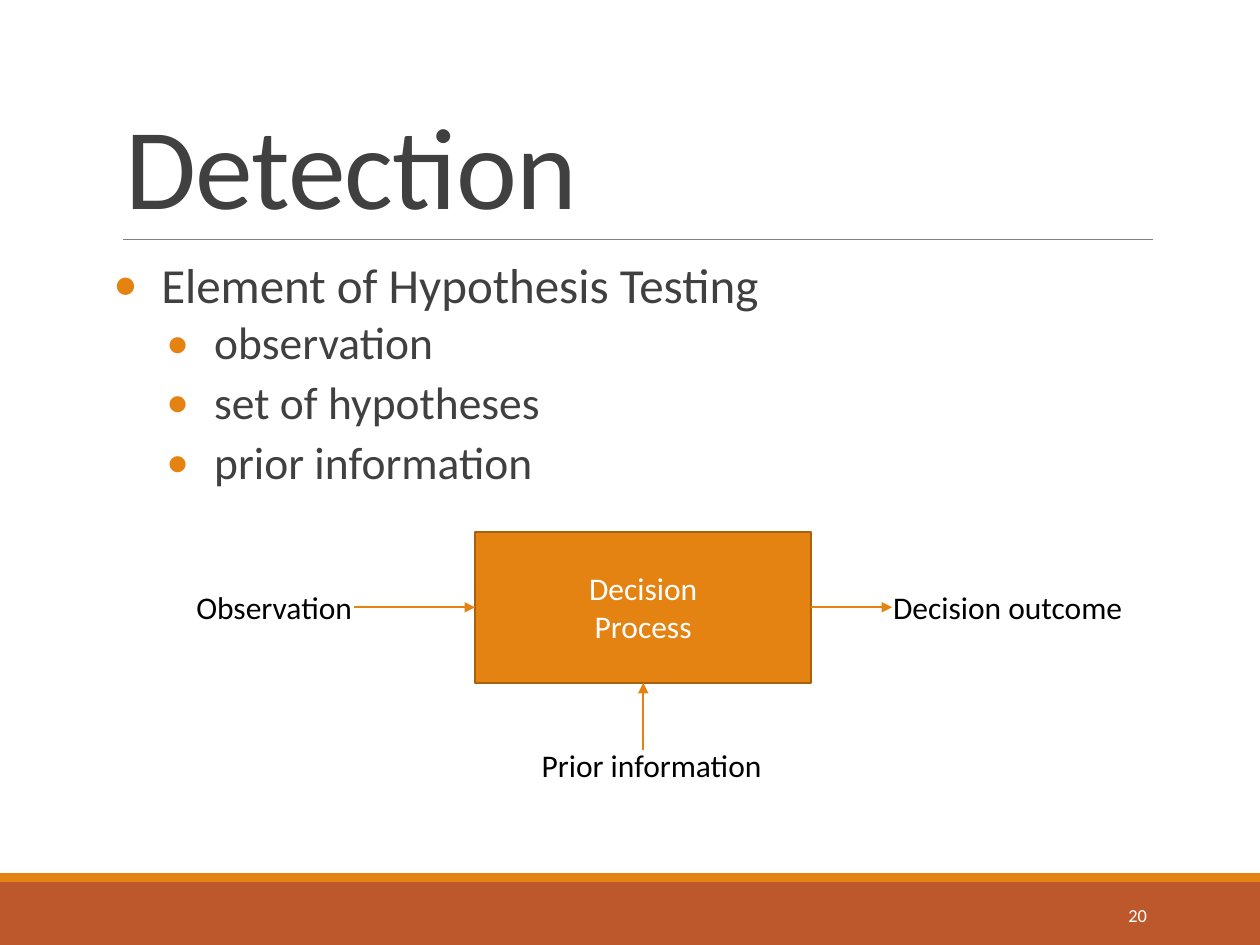
from typing import NamedTuple

from lxml.etree import SubElement
from pptx import Presentation
from pptx.dml.color import RGBColor
from pptx.enum.shapes import MSO_CONNECTOR as Connector, MSO_SHAPE as Shape
from pptx.enum.text import MSO_ANCHOR as Anchor, PP_ALIGN as Align
from pptx.oxml.ns import qn
from pptx.util import Inches, Pt

COLUMNS, ROWS = 100, 75
CELL = Inches(10) / COLUMNS
ORANGE, RUST, BROWN = "E48312", "BD582C", "A9610D"
DARK, GREY, BLACK, WHITE = "404040", "808080", "000000", "FFFFFF"
PADDING = (1, 0.5, 1, 0.5)


class Box(NamedTuple):
    left: float
    top: float
    width: float
    height: float

    def inset(self, left, top, width, height):
        return Box(self.left + left, self.top + top, width, height)

    def point(self, across, down):
        return self.left + self.width * across, self.top + self.height * down


def cells(*counts):
    return [round(count * CELL) for count in counts]


def color(value):
    return RGBColor.from_string(value)


def apply(target, formats):
    for name, value in formats.items():
        setattr(target, name, value)


def write(shape, lines, size, ink, anchor=Anchor.TOP, align=Align.LEFT,
          padding=PADDING, wrap=True):
    frame = shape.text_frame
    sides = ("margin_left", "margin_top", "margin_right", "margin_bottom")
    apply(frame, dict(zip(sides, cells(*padding)),
                      word_wrap=wrap, vertical_anchor=anchor))
    for index, line in enumerate(lines):
        para = frame.paragraphs[0] if index == 0 else frame.add_paragraph()
        para.alignment = align
        span = para.add_run()
        span.text = line
        apply(span.font, {"name": "Calibri", "size": Pt(size)})
        span.font.color.rgb = color(ink)
    return frame.paragraphs


def add_text(page, box, lines, size, ink, **options):
    shape = page.shapes.add_textbox(*cells(*box))
    return write(shape, lines, size, ink, **options)


def add_block(page, box, fill, edge=None):
    block = page.shapes.add_shape(Shape.RECTANGLE, *cells(*box))
    block.shadow.inherit = False
    block.fill.solid()
    block.fill.fore_color.rgb = color(fill)
    if edge:
        block.line.color.rgb = color(edge)
        block.line.width = Pt(1.25)
    else:
        block.line.fill.background()
    return block


def add_line(page, start, end, ink, width, arrow=False):
    line = page.shapes.add_connector(Connector.STRAIGHT, *cells(*start, *end))
    line.line.color.rgb = color(ink)
    line.line.width = Pt(width)
    if arrow:
        SubElement(line.line._get_or_add_ln(), qn("a:tailEnd"), type="triangle")
    SubElement(line._element.spPr, qn("a:effectLst"))


def add_bullet(para, level, left, hanging):
    indent, first = cells(left, -hanging)
    properties = para._p.get_or_add_pPr()
    for name, value in {"marL": indent, "indent": first, "lvl": level}.items():
        properties.set(name, str(value))
    tint = SubElement(properties, qn("a:buClr"))
    SubElement(tint, qn("a:srgbClr"), val=ORANGE)
    SubElement(properties, qn("a:buFont"), typeface="Calibri")
    SubElement(properties, qn("a:buChar"), char="•")


def draw_footer(page, box, number):
    stripe = 0.7
    add_block(page, box.inset(0, stripe, box.width, box.height - stripe), RUST)
    add_block(page, box.inset(0, 0, box.width, stripe), ORANGE)
    add_text(page, box.inset(81.2, 1.3, 10.8, 4), [number], 10.5, WHITE,
             anchor=Anchor.MIDDLE, align=Align.RIGHT)


def draw_title(page, box, title):
    left, bottom = box.point(0, 1)
    add_line(page, (left + 0.8, bottom), box.point(1, 1), GREY, 0.5)
    para, = add_text(page, box, [title], 66, DARK, anchor=Anchor.BOTTOM)
    para.line_spacing = 0.85
    para.runs[0].font._element.set("spc", "-50")


def draw_bullets(page, box, heading, items):
    paras = add_text(page, box, [heading, *items], 28, DARK,
                     padding=(0, 0.5, 0, 0.5))
    for index, para in enumerate(paras):
        level = min(index, 1)
        before, after, size, left = ((12, 2, 28, 3.8), (2, 4, 26, 8))[level]
        apply(para, {"line_spacing": 0.9, "space_before": Pt(before),
                     "space_after": Pt(after)})
        para.runs[0].font.size = Pt(size)
        add_bullet(para, level, left, 3.8)


def draw_diagram(page, box):
    process = box.inset(23.1, 0, 26.7, 12)
    block = add_block(page, process, ORANGE, BROWN)
    write(block, ["Decision", "Process"], 18, WHITE,
          anchor=Anchor.MIDDLE, align=Align.CENTER)

    entry, outlet, base = (process.point(*spot)
                           for spot in ((0, 0.5), (1, 0.5), (0.5, 1)))
    arrows = (
        ((entry[0] - 9.6, entry[1]), entry),
        ((base[0], base[1] + 5.3), base),
        (outlet, (outlet[0] + 6.4, outlet[1])),
    )
    for start, end in arrows:
        add_line(page, start, end, ORANGE, 1, arrow=True)

    labels = (
        ("Observation", 0, 4, 14.7),
        ("Prior information", 27.4, 16.5, 20.2),
        ("Decision outcome", 55.3, 4, 20.3),
    )
    for label, left, top, width in labels:
        add_text(page, box.inset(left, top, width, 4), [label], 18, BLACK,
                 wrap=False)


def main():
    deck = Presentation()
    deck.slide_width, deck.slide_height = cells(COLUMNS, ROWS)
    page = deck.slides.add_slide(deck.slide_layouts[6])
    draw_footer(page, Box(0, 69.3, COLUMNS, 5.7), "20")
    draw_title(page, Box(9, 3.1, 82.5, 15.9), "Detection")
    draw_bullets(page, Box(9, 20.2, 82.5, 44), "Element of Hypothesis Testing",
                 ["observation", "set of hypotheses", "prior information"])
    draw_diagram(page, Box(14.6, 42.2, 75.6, 20.5))
    deck.save("out.pptx")


if __name__ == "__main__":
    main()
